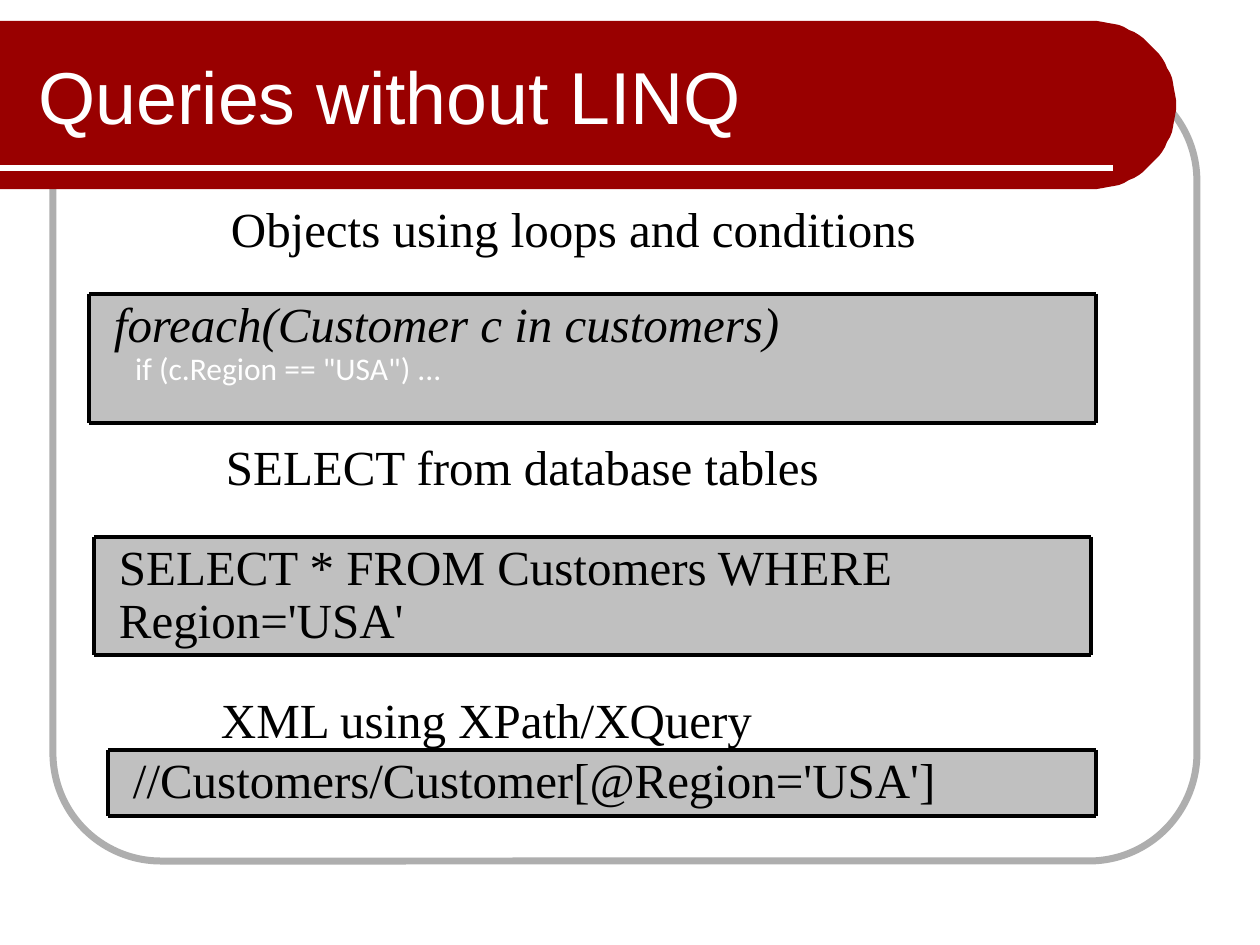
import math

import lxml.etree
import pptx
import pptx.dml.color
import pptx.enum.shapes
import pptx.enum.text
import pptx.oxml.ns
import pptx.util

PX = 914400 / 126
HEX = {"red": "990000", "rim": "AEAEAE", "gray": "C0C0C0",
       "black": "000000", "white": "FFFFFF"}
RGB = {name: pptx.dml.color.RGBColor.from_string(code) for name, code in HEX.items()}
KIND = pptx.enum.shapes.MSO_SHAPE
ANCHOR = pptx.enum.text.MSO_ANCHOR

deck = pptx.Presentation()
deck.slide_width = round(1260 * PX)
deck.slide_height = round(945 * PX)
shapes = deck.slides.add_slide(deck.slide_layouts[6]).shapes


def write(shape, text, color, font, frame, space=1.0):
    """Fill a shape with one left-aligned paragraph; font and frame are format values."""
    body = shape.text_frame
    body.text = text
    body.word_wrap = True
    for key, value in frame.items():
        setattr(body, key, value)
    para = body.paragraphs[0]
    para.alignment = pptx.enum.text.PP_ALIGN.LEFT
    para.line_spacing = space
    for key, value in font.items():
        setattr(para.runs[0].font, key, value)
    para.runs[0].font.color.rgb = RGB[color]


def rule(ends, color, width):
    """Draw a straight line between ends (x1, y1, x2, y2) in px."""
    line = shapes.add_connector(pptx.enum.shapes.MSO_CONNECTOR.STRAIGHT,
                                *[round(n * PX) for n in ends])
    line.line.color.rgb = RGB[color]
    line.line.width = pptx.util.Pt(width)
    props = line._element.spPr
    lxml.etree.SubElement(props, pptx.oxml.ns.qn("a:effectLst"))


# Rounded frame
rim = shapes.add_shape(KIND.ROUNDED_RECTANGLE,
                       *[round(n * PX) for n in (53, 73, 1144, 788)])
rim.adjustments[0] = 0.137
rim.shadow.inherit = False
rim.fill.background()
rim.line.color.rgb = RGB["rim"]
rim.line.width = pptx.util.Pt(4)

# Title band with a half-round right end
mid_x, mid_y, radius, steps = 1092, 105, 84, 48
arc = []
for step in range(steps + 1):
    turn = math.pi * (step / steps - 0.5)
    arc.append((mid_x + radius * math.cos(turn), mid_y + radius * math.sin(turn)))
pen = shapes.build_freeform(0, mid_y - radius, scale=PX)
pen.add_line_segments(arc + [(0, mid_y + radius)], close=True)
band = pen.convert_to_shape()
band.shadow.inherit = False
band.fill.solid()
band.fill.fore_color.rgb = RGB["red"]
band.line.fill.background()
rule((0, 168, 1113, 168), "white", 3)

title = shapes.add_textbox(*[round(n * PX) for n in (26, 32, 982, 126)])
write(title, "Queries without LINQ", "white",
      {"name": "Arial", "size": pptx.util.Pt(42)},
      {"vertical_anchor": ANCHOR.MIDDLE})

# Headings, each with a box of code below
serif = {"name": "Times New Roman", "size": pptx.util.Pt(28)}
inset = {"margin_left": round(25 * PX), "margin_right": round(25 * PX),
         "vertical_anchor": ANCHOR.TOP}
indent = {**inset, "margin_left": round(147 * PX)}
parts = [
    ("Objects using loops and conditions", (84, 199, 1082, 79),
     'foreach(Customer c in customers)\v   if (c.Region == "USA") ...',
     (89, 294, 1007, 129), True),
    ("SELECT from database tables", (79, 437, 1082, 79),
     "SELECT * FROM Customers WHERE Region='USA'",
     (94, 537, 997, 118), False),
    ("XML using XPath/XQuery", (74, 690, 1056, 69),
     "//Customers/Customer[@Region='USA']",
     (108, 750, 988, 66), False),
]
for head, place, code, area, slant in parts:
    box = shapes.add_shape(KIND.RECTANGLE, *[round(n * PX) for n in area])
    box.shadow.inherit = False
    box.fill.solid()
    box.fill.fore_color.rgb = RGB["gray"]
    box.line.fill.background()
    write(box, code, "black", {**serif, "italic": slant}, inset, 0.9)

    left, top, width, height = area
    right, base = left + width, top + height
    for ends in ((left, top, right, top), (left, base, right, base),
                 (left, top, left, base), (right, top, right, base)):
        rule(ends, "black", 2.25)

    label = shapes.add_textbox(*[round(n * PX) for n in place])
    write(label, head, "black", serif, indent, 0.9)

deck.save("out.pptx")
